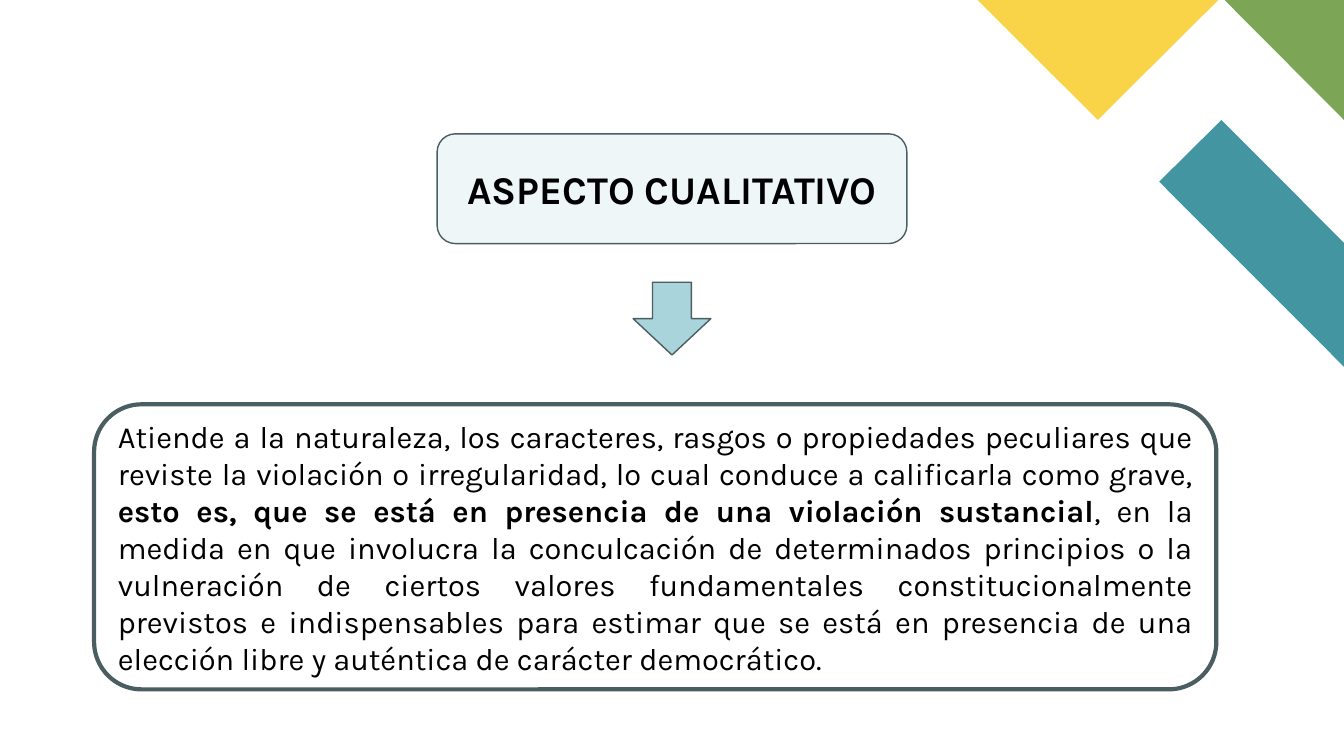
from pptx import Presentation
from pptx.dml.color import RGBColor
from pptx.enum.shapes import MSO_SHAPE as Preset
from pptx.enum.text import MSO_ANCHOR as Anchor, PP_ALIGN as Align
from pptx.util import Pt

WHITE = RGBColor(0xFF, 0xFF, 0xFF)
BLACK = RGBColor(0x00, 0x00, 0x00)
SLATE = RGBColor(0x4A, 0x5D, 0x60)
PALE = RGBColor(0xEE, 0xF6, 0xF8)
AQUA = RGBColor(0xA9, 0xD4, 0xDB)
TEAL = RGBColor(0x44, 0x95, 0xA2)
GREEN = RGBColor(0x7C, 0xA6, 0x55)
YELLOW = RGBColor(0xF9, 0xD4, 0x48)

WIDTH, HEIGHT = 960, 540
FONT = "Karla"

CORNER_PIECES = [
    (TEAL, [(960, 262), (960, 173.5), (872.5, 85.7), (828, 129.8)]),
    (GREEN, [(960, 85.7), (960, 0), (874.7, 0)]),
    (YELLOW, [(698.3, 0), (784.2, 85.7), (870.3, 0)]),
]

TITLE = [("ASPECTO CUALITATIVO", True)]
DEFINITION = [
    ("Atiende a la naturaleza, los caracteres, rasgos o propiedades peculiares que "
     "reviste la violación o irregularidad, lo cual conduce a calificarla como grave, ", False),
    ("esto es, que se está en presencia de una violación sustancial", True),
    (", en la medida en que involucra la conculcación de determinados principios o la "
     "vulneración de ciertos valores fundamentales constitucionalmente previstos e "
     "indispensables para estimar que se está en presencia de una elección libre y "
     "auténtica de carácter democrático.", False),
]

TITLE_FRAME = (312.2, 95.6, 335.6, 78.4)
ARROW_FRAME = (452.2, 201.6, 55.6, 52)
DEFINITION_FRAME = (67.2, 288.8, 801.6, 203.6)


def add_preset(page, preset, frame, fill, line_width):
    shape = page.shapes.add_shape(preset, *[Pt(length) for length in frame])
    shape.shadow.inherit = False
    shape.fill.solid()
    shape.fill.fore_color.rgb = fill
    shape.line.color.rgb = SLATE
    shape.line.width = Pt(line_width)
    return shape


def write(shape, spans, size, align):
    box = shape.text_frame
    box.word_wrap = True
    box.vertical_anchor = Anchor.MIDDLE
    para = box.paragraphs[0]
    para.alignment = align
    para.font.name = FONT
    para.font.size = Pt(size)
    para.font.color.rgb = BLACK
    for text, bold in spans:
        span = para.add_run()
        span.text = text
        span.font.bold = bold


def add_corner_piece(page, color, points):
    start, *others = [(Pt(x), Pt(y)) for x, y in points]
    builder = page.shapes.build_freeform(*start)
    builder.add_line_segments(others, close=True)
    piece = builder.convert_to_shape()
    piece.shadow.inherit = False
    piece.fill.solid()
    piece.fill.fore_color.rgb = color
    piece.line.fill.background()


def main():
    deck = Presentation()
    deck.slide_width, deck.slide_height = Pt(WIDTH), Pt(HEIGHT)
    page = deck.slides.add_slide(deck.slide_layouts[6])
    for color, points in CORNER_PIECES:
        add_corner_piece(page, color, points)
    title = add_preset(page, Preset.ROUNDED_RECTANGLE, TITLE_FRAME, PALE, 1)
    write(title, TITLE, 28, Align.CENTER)
    definition = add_preset(page, Preset.ROUNDED_RECTANGLE, DEFINITION_FRAME, WHITE, 3)
    write(definition, DEFINITION, 22, Align.JUSTIFY)
    add_preset(page, Preset.DOWN_ARROW, ARROW_FRAME, AQUA, 1)
    deck.save("out.pptx")


if __name__ == "__main__":
    main()
